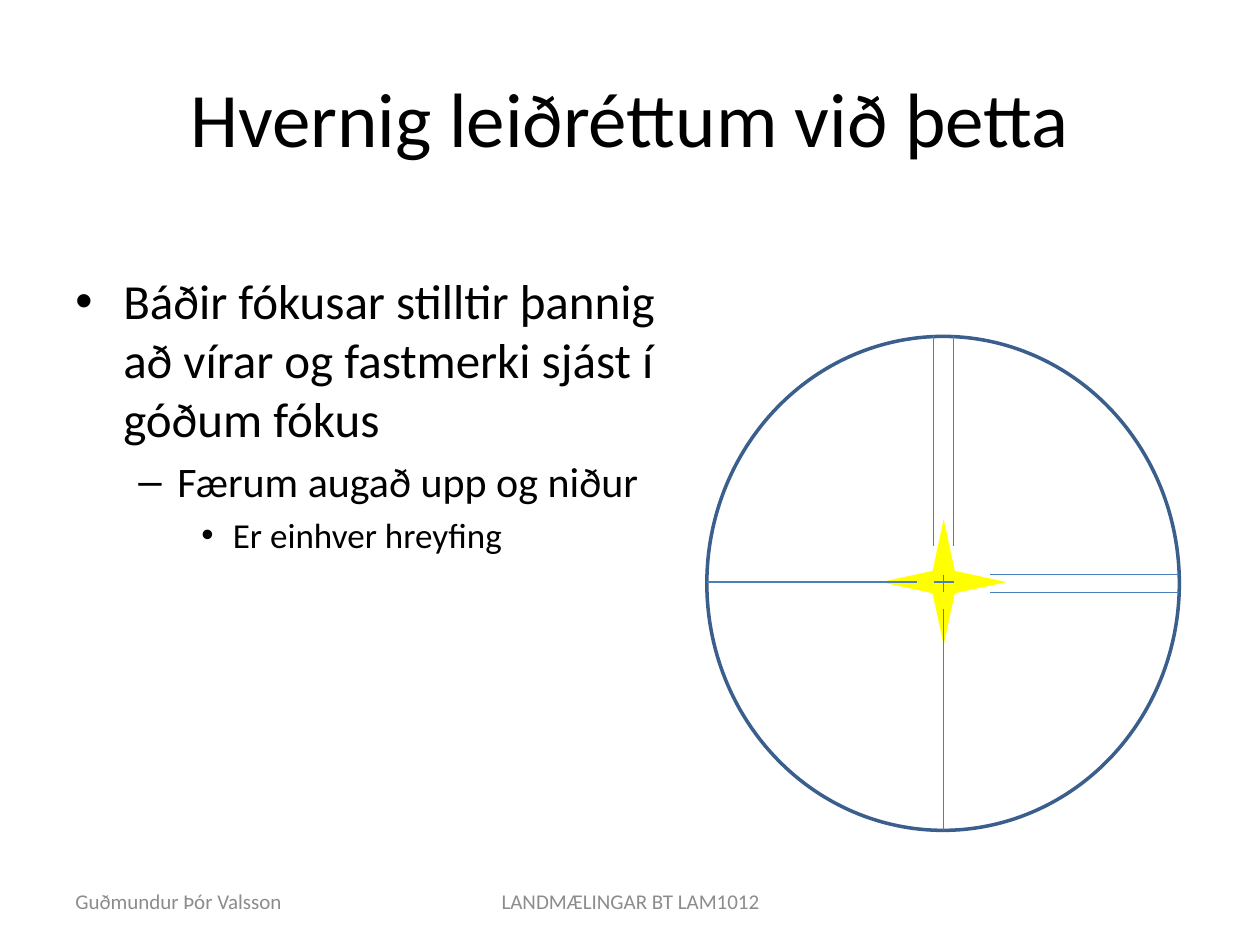
"""Builds the slide on correcting the focus of crosshairs and target."""
from lxml import etree
from pptx import Presentation
from pptx.dml.color import RGBColor
from pptx.enum.shapes import MSO_CONNECTOR, MSO_SHAPE
from pptx.enum.text import MSO_ANCHOR, PP_ALIGN
from pptx.oxml.ns import qn
from pptx.util import Inches, Pt

STRAIGHT = MSO_CONNECTOR.STRAIGHT
STAR, OVAL = MSO_SHAPE.STAR_4_POINT, MSO_SHAPE.OVAL
LEFT, CENTER = PP_ALIGN.LEFT, PP_ALIGN.CENTER
TOP, MIDDLE = MSO_ANCHOR.TOP, MSO_ANCHOR.MIDDLE

FONT = "Calibri"
COLORS = {"text": "000000", "footer": "8C8C8C", "star": "FFFF00",
          "rim": "3A5F8C", "wire": "4B7EBC"}

TITLE = "Hvernig leiðréttum við þetta"
POINTS = [
    {"text": "Báðir fókusar stilltir þannig að vírar og fastmerki sjást í góðum fókus",
     "size": 28, "bullet": "•", "margin": 0.38, "hang": 0.38},
    {"text": "Færum augað upp og niður",
     "size": 24, "bullet": "–", "margin": 0.81, "hang": 0.31},
    {"text": "Er einhver hreyfing",
     "size": 20, "bullet": "•", "margin": 1.25, "hang": 0.25},
]
FOOTERS = [
    ("Guðmundur Þór Valsson", (0.5, 6.95, 2.33, 0.4), LEFT),
    ("LANDMÆLINGAR BT LAM1012", (3.42, 6.95, 3.17, 0.4), CENTER),
]

STAR_BOX = (6.99, 4.12, 1, 1)
LENS_BOX = (5.61, 2.67, 3.75, 3.92)
LENS_LEFT, LENS_TOP, LENS_WIDTH, LENS_HEIGHT = LENS_BOX
LENS_RIGHT, LENS_BOTTOM = LENS_LEFT + LENS_WIDTH, LENS_TOP + LENS_HEIGHT
CENTER_X, CENTER_Y = 7.49, 4.62
PAIR_X, PAIR_Y = (7.41, 7.57), (4.56, 4.7)
WIRES = [
    *[(x, LENS_TOP, x, 4.33) for x in PAIR_X],
    *[(7.86, y, LENS_RIGHT, y) for y in PAIR_Y],
    (CENTER_X, 4.83, CENTER_X, LENS_BOTTOM),
    (LENS_LEFT, CENTER_Y, 7.28, CENTER_Y),
    (PAIR_X[0], CENTER_Y, PAIR_X[1], CENTER_Y),
    (CENTER_X, PAIR_Y[0], CENTER_X, PAIR_Y[1]),
]


def rgb(name):
    return RGBColor.from_string(COLORS[name])


def inches(values):
    return [Inches(value) for value in values]


def add_bullet(paragraph, bullet, margin, hang):
    properties = paragraph._p.get_or_add_pPr()
    properties.set("marL", str(Inches(margin)))
    properties.set("indent", str(-Inches(hang)))
    etree.SubElement(properties, qn("a:buFont")).set("typeface", "Arial")
    etree.SubElement(properties, qn("a:buChar")).set("char", bullet)


def write(paragraph, text, size=12, color="text", align=LEFT, before=0,
          bullet=None, margin=0, hang=0):
    if bullet:
        add_bullet(paragraph, bullet, margin, hang)
    paragraph.alignment = align
    paragraph.space_before = Pt(before)
    run = paragraph.add_run()
    run.text = text
    run.font.name, run.font.size = FONT, Pt(size)
    run.font.color.rgb = rgb(color)


def add_frame(slide, box, anchor):
    frame = slide.shapes.add_textbox(*inches(box)).text_frame
    frame.word_wrap = True
    frame.vertical_anchor = anchor
    return frame


def add_title(slide):
    title = slide.shapes.title
    title.left, title.top, title.width, title.height = inches((0.5, 0.3, 9, 1.25))
    title.text_frame.vertical_anchor = MIDDLE
    write(title.text_frame.paragraphs[0], TITLE, size=44, align=CENTER)


def add_points(slide):
    frame = add_frame(slide, (0.5, 2.1, 4.92, 4.85), TOP)
    for index, point in enumerate(POINTS):
        paragraph = frame.add_paragraph() if index else frame.paragraphs[0]
        write(paragraph, before=0.2 * point["size"] if index else 0, **point)


def add_star(slide):
    star = slide.shapes.add_shape(STAR, *inches(STAR_BOX))
    star.shadow.inherit = False
    star.fill.solid()
    star.fill.fore_color.rgb = rgb("star")
    star.line.fill.background()


def add_lens(slide):
    lens = slide.shapes.add_shape(OVAL, *inches(LENS_BOX))
    lens.shadow.inherit = False
    lens.fill.background()
    lens.line.color.rgb = rgb("rim")
    lens.line.width = Pt(2)
    for ends in WIRES:
        wire = slide.shapes.add_connector(STRAIGHT, *inches(ends))
        wire.line.color.rgb = rgb("wire")
        wire.line.width = Pt(0.75)
        etree.SubElement(wire._element.spPr, qn("a:effectLst"))


def main():
    deck = Presentation()
    deck.slide_width, deck.slide_height = Inches(10), Inches(7.5)
    slide = deck.slides.add_slide(deck.slide_layouts.get_by_name("Title Only"))
    add_star(slide)
    add_title(slide)
    add_points(slide)
    add_lens(slide)
    for text, box, align in FOOTERS:
        write(add_frame(slide, box, MIDDLE).paragraphs[0], text,
              color="footer", align=align)
    deck.save("out.pptx")


if __name__ == "__main__":
    main()
